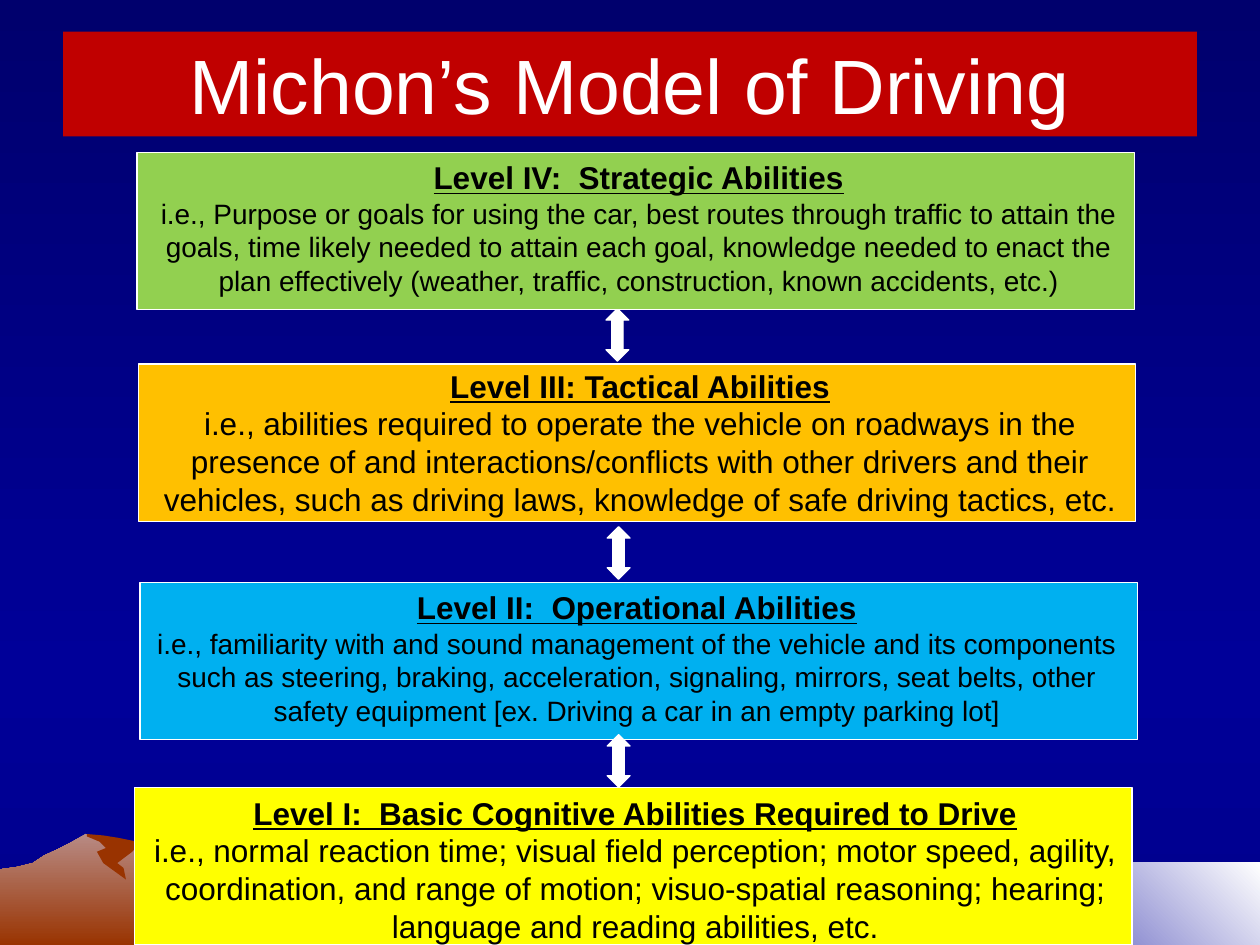
"""Build the slide on Michon's four-level model of driving."""
from pptx import Presentation
from pptx.dml.color import RGBColor
from pptx.enum.shapes import MSO_SHAPE
from pptx.enum.text import MSO_ANCHOR, MSO_AUTO_SIZE, PP_ALIGN
from pptx.util import Pt

RECT = MSO_SHAPE.RECTANGLE
ARROW = MSO_SHAPE.UP_DOWN_ARROW
CENTER = PP_ALIGN.CENTER
MIDDLE = MSO_ANCHOR.MIDDLE
GROW = MSO_AUTO_SIZE.SHAPE_TO_FIT_TEXT

COLORS = {
    "night": "00006D", "blue": "000099", "dusk": "00008C",
    "rock": "993300", "haze": "B98E8A", "white": "FFFFFF", "black": "000000",
    "red": "C00000", "yellow": "FFFF00", "sky": "00B0F0",
    "orange": "FFC000", "green": "92D050",
}

RIDGE = [
    (497, 540.7), (480, 538.6), (311, 512.6), (255, 478.8), (238, 477.4),
    (229, 478), (213, 486.7), (195, 491), (187, 486.7), (170, 490.3),
    (160, 476.6), (150, 473.8), (141, 473.8), (134, 477.4), (115, 483),
    (107, 480.2), (95, 483), (89, 481.7), (80, 481.7), (67.7, 483),
    (49, 476.6), (40, 481.7), (33, 485.3), (25, 489), (18.7, 493.2),
    (10, 495.4), (0, 496.8), (0, 540.7),
]
CREVICE = [
    (78.5, 481), (80, 481.7), (75.6, 486.7), (67, 493.2), (70.6, 496),
    (72, 502.6), (59, 493.2), (55.4, 486.7), (60.5, 484.6), (57, 481),
    (49.7, 478), (49.7, 476.6), (59, 477.4), (67.7, 478.8),
]
LEVELS = [
    ("yellow", (77, 450), (79, 450, 568, 94.5), 18,
     "Level I:  Basic Cognitive Abilities Required to Drive",
     "i.e., normal reaction time; visual field perception; motor speed, agility, "
     "coordination, and range of motion; visuo-spatial reasoning; hearing; "
     "language and reading abilities, etc."),
    ("sky", (80, 332.7), (82.7, 332.7, 562.5, 87), 16,
     "Level II:  Operational Abilities",
     "i.e., familiarity with and sound management of the vehicle and its components "
     "such as steering, braking, acceleration, signaling, mirrors, seat belts, other "
     "safety equipment [ex. Driving a car in an empty parking lot]"),
    ("orange", (79, 208), (82, 206, 567.5, 94.5), 18,
     "Level III: Tactical Abilities",
     "i.e., abilities required to operate the vehicle on roadways in the presence of "
     "and interactions/conflicts with other drivers and their vehicles, such as "
     "driving laws, knowledge of safe driving tactics, etc."),
    ("green", (78.3, 87), (80, 87, 570, 87), 16,
     "Level IV:  Strategic Abilities",
     "i.e., Purpose or goals for using the car, best routes through traffic to attain "
     "the goals, time likely needed to attain each goal, knowledge needed to enact the "
     "plan effectively (weather, traffic, construction, known accidents, etc.)"),
]
ARROWS = [(347, 419.8), (347, 301), (346.3, 176.4)]


class Deck:
    """Hold the style and the current slide."""

    font = "Arial"

    def __init__(self, s):
        """Keep the slide to draw on."""
        self.s = s

    def color(self, name):
        """Return a named colour."""
        return RGBColor.from_string(COLORS[name])

    def paint(self, fill, names, angle=270):
        """Apply a solid fill for one colour, or a gradient for two."""
        if len(names) == 1:
            fill.solid()
            fill.fore_color.rgb = self.color(names[0])
            return
        fill.gradient()
        fill.gradient_angle = angle
        for stop, name, position in zip(fill.gradient_stops, names, (0, 1)):
            stop.color.rgb = self.color(name)
            stop.position = position

    def finish(self, sp, names, line=None, angle=270):
        """Set fill and outline and drop the shadow."""
        sp.shadow.inherit = False
        self.paint(sp.fill, names, angle)
        if line:
            sp.line.color.rgb = self.color(line)
            sp.line.width = Pt(0.75)
        else:
            sp.line.fill.background()

    def shape(self, kind, box, names, line=None, angle=270):
        """Add a preset shape."""
        sp = self.s.shapes.add_shape(kind, *map(Pt, box))
        self.finish(sp, names, line, angle)

    def outline(self, points, names):
        """Add a closed polygon."""
        pts = [(Pt(x), Pt(y)) for x, y in points]
        fb = self.s.shapes.build_freeform(*pts[0])
        fb.add_line_segments(pts[1:], close=True)
        self.finish(fb.convert_to_shape(), names)

    def paragraph(self, p, text, size, color, bold=False):
        """Fill a centred paragraph; bold text is a heading and underlined."""
        p.text = text
        p.alignment = CENTER
        p.font.name = self.font
        p.font.size = Pt(size)
        p.font.color.rgb = self.color(color)
        p.font.bold = bold
        p.font.underline = bold

    def title(self, text, box):
        """Place the title above the scenery."""
        sp = self.s.shapes.title
        sp.left, sp.top, sp.width, sp.height = map(Pt, box)
        self.paint(sp.fill, ["red"])
        sp.text_frame.vertical_anchor = MIDDLE
        self.paragraph(sp.text_frame.paragraphs[0], text, 44, "white")
        sp.element.getparent().append(sp.element)

    def level(self, fill, corner, box, size, heading, body):
        """Add a level's panel with its heading and description."""
        self.shape(RECT, (*corner, 570, 90), [fill], "white")
        tf = self.s.shapes.add_textbox(*map(Pt, box)).text_frame
        tf.word_wrap = True
        tf.auto_size = GROW
        self.paragraph(tf.paragraphs[0], heading, 18, "black", True)
        self.paragraph(tf.add_paragraph(), body, size, "black")

    def scenery(self):
        """Draw the night sky, the glow and the ridge."""
        self.paint(self.s.background.fill, ["night", "blue"])
        self.shape(RECT, (0, 384, 720, 156), ["blue", "dusk"])
        self.shape(RECT, (0, 0, 720, 384), ["night", "blue"])
        self.shape(RECT, (492, 493, 228, 48), ["blue", "white"], angle=45)
        self.outline(RIDGE, ["haze", "rock"])
        self.outline(CREVICE, ["rock"])


def main():
    """Build and save the slide."""
    prs = Presentation()
    prs.slide_width, prs.slide_height = Pt(720), Pt(540)
    deck = Deck(prs.slides.add_slide(prs.slide_layouts[5]))
    deck.scenery()
    deck.title("Michon’s Model of Driving", (36, 18, 648, 60))
    *lower, top = LEVELS
    for level in lower:
        deck.level(*level)
    for corner in ARROWS:
        deck.shape(ARROW, (*corner, 13, 30), ["white"], "white")
    deck.level(*top)
    prs.save("out.pptx")


if __name__ == "__main__":
    main()
